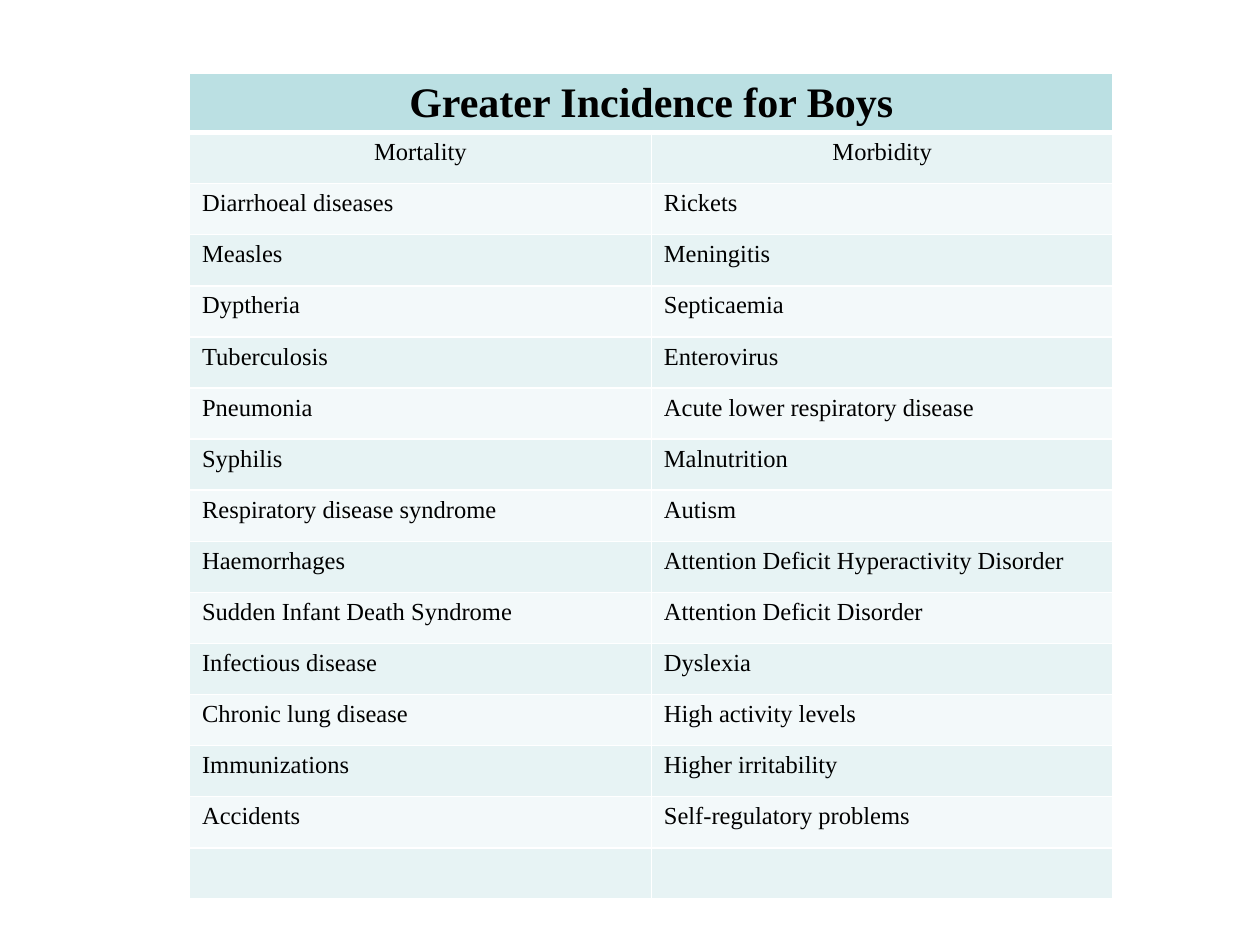
import pptx
import pptx.dml.color
import pptx.enum.text
import pptx.oxml
import pptx.oxml.ns
import pptx.util

Cm = pptx.util.Cm
Pt = pptx.util.Pt
CENTER = pptx.enum.text.PP_ALIGN.CENTER

COLORS = {
    "heading": "BBE0E3",
    "odd_row": "E7F3F4",
    "even_row": "F3F9FA",
    "border": "FFFFFF",
    "text": "000000",
}
FONT = "Times New Roman"
HEADING = "Greater Incidence for Boys"
INCIDENCE = [
    ("Mortality", "Morbidity"),
    ("Diarrhoeal diseases", "Rickets"),
    ("Measles", "Meningitis"),
    ("Dyptheria", "Septicaemia"),
    ("Tuberculosis", "Enterovirus"),
    ("Pneumonia", "Acute lower respiratory disease"),
    ("Syphilis", "Malnutrition"),
    ("Respiratory disease syndrome", "Autism"),
    ("Haemorrhages", "Attention Deficit Hyperactivity Disorder"),
    ("Sudden Infant Death Syndrome", "Attention Deficit Disorder"),
    ("Infectious disease", "Dyslexia"),
    ("Chronic lung disease", "High activity levels"),
    ("Immunizations", "Higher irritability"),
    ("Accidents", "Self-regulatory problems"),
    ("", ""),
]


def rgb(name):
    return pptx.dml.color.RGBColor.from_string(COLORS[name])


def set_borders(cell, top=1, bottom=1):
    properties = cell._tc.get_or_add_tcPr()
    widths = {"lnL": 1, "lnR": 1, "lnT": top, "lnB": bottom}
    for position, (side, width) in enumerate(widths.items()):
        border = pptx.oxml.parse_xml(
            f'<a:{side} {pptx.oxml.ns.nsdecls("a")} w="{Pt(width)}">'
            f'<a:solidFill><a:srgbClr val="{COLORS["border"]}"/></a:solidFill>'
            f'</a:{side}>'
        )
        properties.insert(position, border)


def fill_cell(cell, wording, color, size=14, bold=False, align=None):
    cell.fill.solid()
    cell.fill.fore_color.rgb = rgb(color)
    if not wording:
        return
    cell.text_frame.text = wording
    paragraph = cell.text_frame.paragraphs[0]
    paragraph.alignment = align
    font = paragraph.runs[0].font
    font.name = FONT
    font.size = Pt(size)
    font.bold = bold
    font.color.rgb = rgb("text")


def add_incidence_table(slide, left, top, width, height):
    row_count = len(INCIDENCE) + 1
    table = slide.shapes.add_table(row_count, 2, left, top, width, height).table

    heading = table.cell(0, 0)
    heading.merge(table.cell(0, 1))
    fill_cell(heading, HEADING, "heading", size=24, bold=True, align=CENTER)
    for column in range(2):
        set_borders(table.cell(0, column), bottom=3)

    for row, conditions in enumerate(INCIDENCE, start=1):
        color = "odd_row" if row % 2 else "even_row"
        for column, condition in enumerate(conditions):
            cell = table.cell(row, column)
            fill_cell(cell, condition, color, align=CENTER if row == 1 else None)
            set_borders(cell, top=3 if row == 1 else 1)


def main():
    presentation = pptx.Presentation()
    presentation.slide_width = Cm(25.4)
    presentation.slide_height = Cm(19.05)
    slide = presentation.slides.add_slide(presentation.slide_layouts[6])
    add_incidence_table(slide, Cm(3.82), Cm(1.48), Cm(18.62), Cm(16.48))
    presentation.save("out.pptx")


if __name__ == "__main__":
    main()
